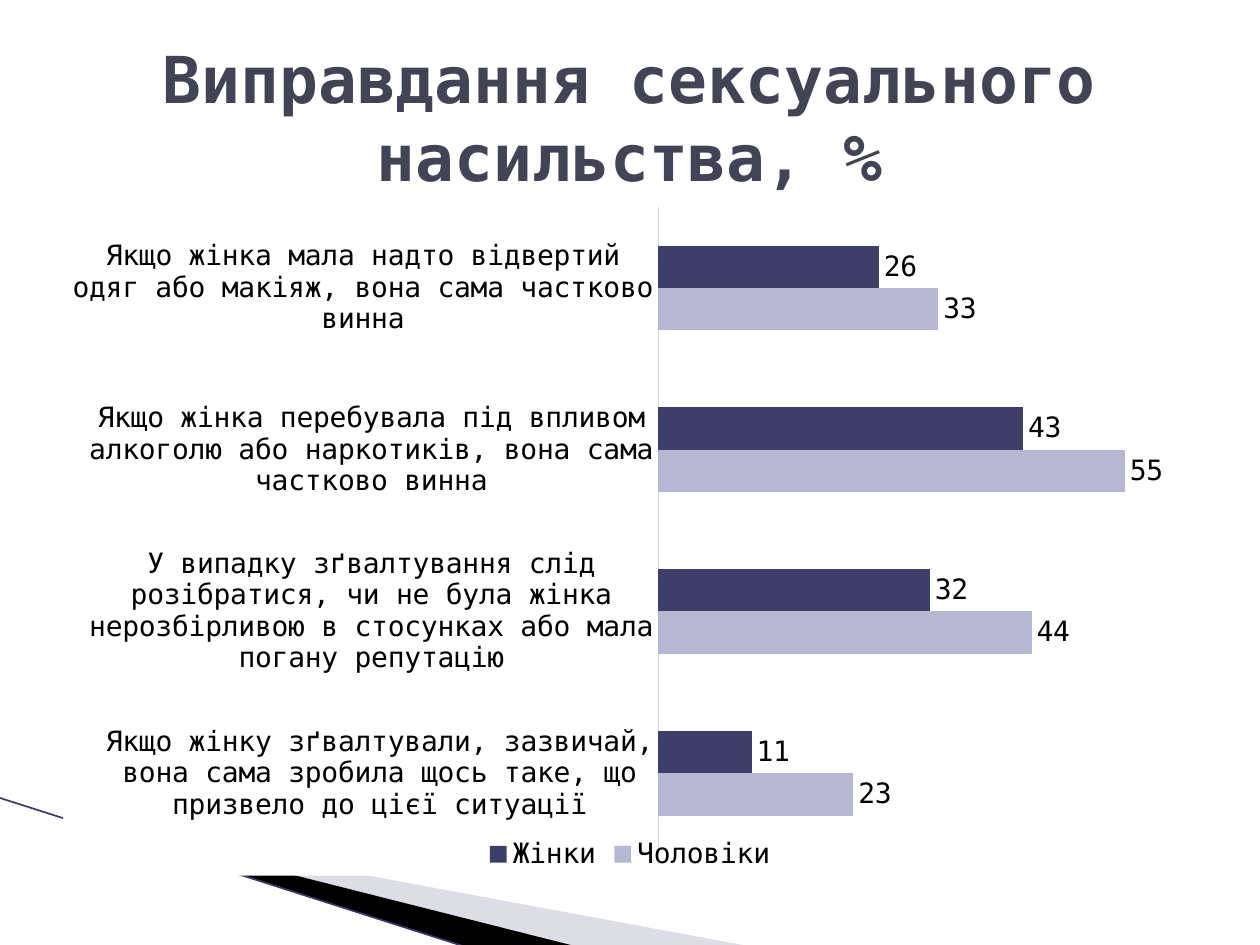
"""Build the slide with a clustered bar chart of views on sexual violence."""
from lxml import etree
from pptx import Presentation
from pptx.chart.data import CategoryChartData
from pptx.dml.color import RGBColor
from pptx.enum.chart import (XL_CHART_TYPE as CT, XL_LABEL_POSITION as LP,
                             XL_LEGEND_POSITION as LEG, XL_TICK_LABEL_POSITION as TLP,
                             XL_TICK_MARK as TM)
from pptx.enum.shapes import MSO_CONNECTOR as CONN
from pptx.enum.text import MSO_ANCHOR as ANCHOR, PP_ALIGN as ALIGN
from pptx.oxml import parse_xml
from pptx.oxml.ns import nsdecls, qn
from pptx.util import Inches, Pt

FONT = "DejaVu Sans Mono"
C = {"title": "424456", "text": "000000", "women": "3E3F68", "men": "B7B7D4",
     "axis": "D9D9D9", "wedge": "AAAABF", "black": "000000", "edge": "3A3A68",
     "white": "FFFFFF"}


def rgb(key):
    return RGBColor.from_string(C[key])


def set_font(font, size, key="text", bold=False):
    for name, value in {"name": FONT, "size": Pt(size), "bold": bold}.items():
        setattr(font, name, value)
    font.color.rgb = rgb(key)


prs = Presentation()
prs.slide_width, prs.slide_height = Inches(10), Inches(7.5)
s = prs.slides.add_slide(prs.slide_layouts[6])

wedges = [("wedge", (0.78, 5.47, 4.16, 1.58),
           [(0.55, 6.51), (5.95, 7.51), (4.56, 7.51), (0.55, 6.5)]),
          ("black", (-0.06, 6.33, 4.16, 0.92),
           [(0.53, 6.49), (4.57, 7.51), (3.72, 7.52), (0.54, 6.5)])]
for key, frame, points in wedges:
    pts = [(Inches(x), Inches(y)) for x, y in points]
    fb = s.shapes.build_freeform(*pts[0])
    fb.add_line_segments(pts[1:], close=True)
    sp = fb.convert_to_shape()
    left, top, width, height = map(Inches, frame)
    dx, dy = sp.left - left, sp.top - top
    outline = sp._element.spPr.find(".//" + qn("a:path"))
    outline.set("w", str(width))
    outline.set("h", str(height))
    for pt in outline.iter(qn("a:pt")):
        pt.set("x", str(int(pt.get("x")) + dx))
        pt.set("y", str(int(pt.get("y")) + dy))
    sp.left, sp.top, sp.width, sp.height = left, top, width, height
    sp.shadow.inherit = False
    sp.fill.solid()
    sp.fill.fore_color.rgb = rgb(key)
    sp.line.fill.background()
    if key == "wedge":
        clr = sp.fill._xPr.find(".//" + qn("a:srgbClr"))
        etree.SubElement(clr, qn("a:alpha"), val="40000")

ln = s.shapes.add_connector(CONN.STRAIGHT, Inches(-0.01), Inches(6.33), Inches(3.71), Inches(7.52))
ln.line.color.rgb = rgb("edge")
ln.line.width = Pt(0.95)
etree.SubElement(ln._element.spPr, qn("a:effectLst"))

cd = CategoryChartData()
cd.categories = [
    "Якщо жінку зґвалтували, зазвичай, вона сама зробила щось таке, що призвело до цієї ситуації",
    "У випадку зґвалтування слід розібратися, чи не була жінка нерозбірливою в стосунках "
    "або мала погану репутацію",
    "Якщо жінка перебувала під впливом алкоголю або наркотиків, вона сама частково винна",
    "Якщо жінка мала надто відвертий одяг або макіяж, вона сама частково винна"]
cd.add_series("Чоловіки", (23, 44, 55, 33))
cd.add_series("Жінки", (11, 32, 43, 26))
ch = s.shapes.add_chart(CT.BAR_CLUSTERED, Inches(0.5), Inches(1.48), Inches(9), Inches(5.47), cd).chart
set_font(ch.font, 10.5)
ch.has_title = False
ch.has_legend = True
ch.legend.position = LEG.BOTTOM
ch.legend.include_in_layout = False
set_font(ch.legend.font, 16)

cat, val = ch.category_axis, ch.value_axis
for name, value in {"major_tick_mark": TM.NONE, "minor_tick_mark": TM.NONE,
                    "tick_label_position": TLP.NEXT_TO_AXIS}.items():
    setattr(cat, name, value)
set_font(cat.tick_labels.font, 16)
cat.format.line.color.rgb = rgb("axis")
cat.format.line.width = Pt(0.75)
for name, value in {"visible": False, "has_major_gridlines": False,
                    "major_tick_mark": TM.NONE, "minor_tick_mark": TM.NONE,
                    "minimum_scale": 0, "maximum_scale": 60}.items():
    setattr(val, name, value)

plot = ch.plots[0]
plot.gap_width, plot.overlap, plot.vary_by_categories = 182, 0, False
for ser, key in zip(plot.series, ("men", "women")):
    ser.format.fill.solid()
    ser.format.fill.fore_color.rgb = rgb(key)
    dl = ser.data_labels
    dl.show_value = True
    dl.position = LP.OUTSIDE_END
    set_font(dl.font, 16)

area = ch._chartSpace.chart.plotArea
for old in area.findall(qn("c:layout")):
    area.remove(old)
layout = {"layoutTarget": "inner", "xMode": "edge", "yMode": "edge",
          "x": 0.525, "y": 0.03, "w": 0.449, "h": 0.939}
tags = "".join(f'<c:{k} val="{v}"/>' for k, v in layout.items())
area.insert(0, parse_xml(f'<c:layout {nsdecls("c")}><c:manualLayout>{tags}</c:manualLayout></c:layout>'))
ch._chartSpace.chart.addnext(parse_xml(
    f'<c:spPr {nsdecls("c", "a")}><a:solidFill><a:srgbClr val="{C["white"]}"/></a:solidFill>'
    '<a:ln><a:noFill/></a:ln></c:spPr>'))

tf = s.shapes.add_textbox(Inches(0.5), Inches(0.3), Inches(9), Inches(1.25)).text_frame
tf.word_wrap = True
tf.vertical_anchor = ANCHOR.MIDDLE
p = tf.paragraphs[0]
p.alignment = ALIGN.CENTER
r = p.add_run()
r.text = "Виправдання сексуального насильства, %"
set_font(r.font, 36.9, "title", True)

prs.save("out.pptx")
